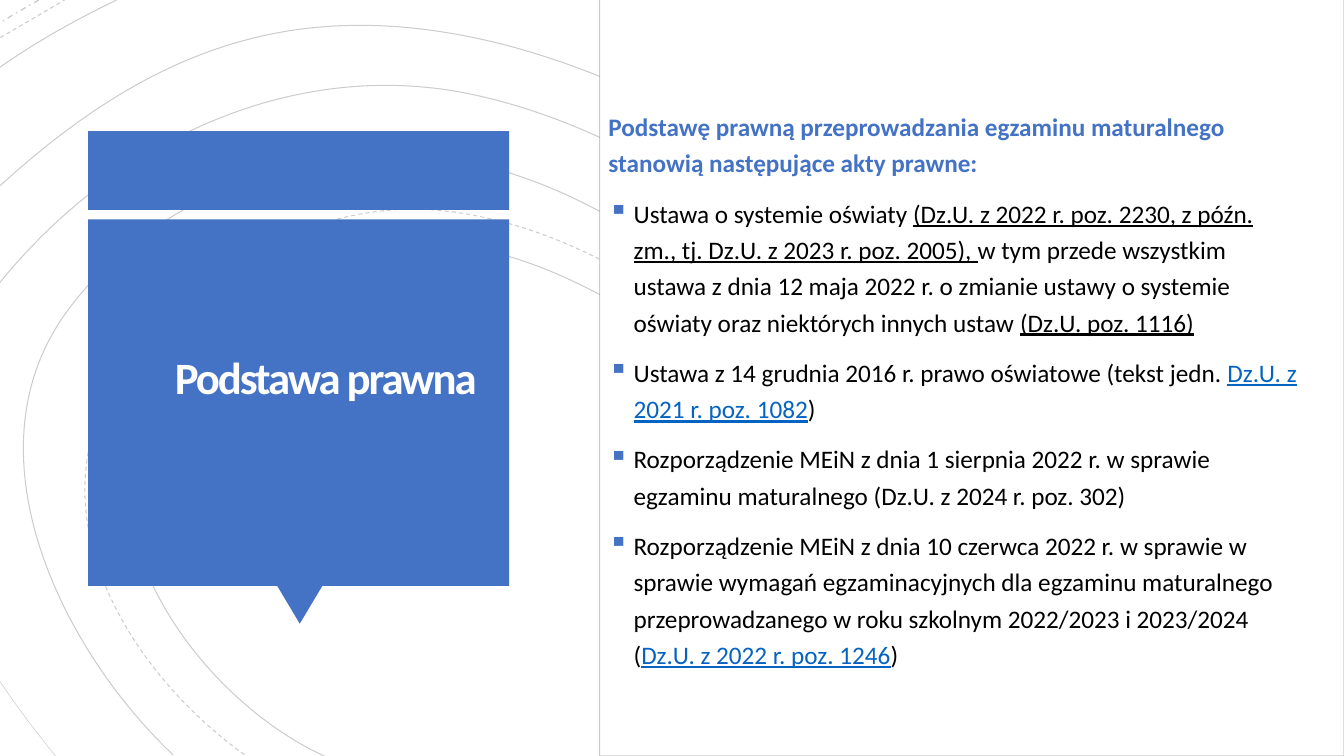
import pptx
import pptx.dml.color
import pptx.enum.dml
import pptx.enum.shapes
import pptx.enum.text
import pptx.oxml
import pptx.oxml.ns
import pptx.util

PX = 9525  # EMU in one px (96 px to the inch)
THEME = {
    "font": "Calibri",
    "accent": pptx.dml.color.RGBColor.from_string("4472C4"),
    "title": pptx.dml.color.RGBColor.from_string("FFFEFF"),
    "text": pptx.dml.color.RGBColor.from_string("000000"),
    "link": pptx.dml.color.RGBColor.from_string("0563C1"),
    "panel": pptx.dml.color.RGBColor.from_string("FFFFFF"),
    "title_size": pptx.util.Pt(32),
    "body_size": pptx.util.Pt(18),
}
qn = pptx.oxml.ns.qn
SOLID = pptx.enum.dml.MSO_LINE.SOLID
DASH = pptx.enum.dml.MSO_LINE.DASH
DASH_DOT = pptx.enum.dml.MSO_LINE.DASH_DOT
PRESET = pptx.enum.shapes.MSO_SHAPE


def draw_faint_line(shape, width, dash):
    shape.shadow.inherit = False
    shape.line.color.rgb = THEME["text"]
    shape.line.width = pptx.util.Pt(width)
    shape.line.dash_style = dash
    line_color = shape.element.spPr.find(qn("a:ln")).find(".//" + qn("a:srgbClr"))
    line_color.append(pptx.oxml.parse_xml(
        f'<a:alpha {pptx.oxml.ns.nsdecls("a")} val="20000"/>'))


def format_run(run, size, color, bold=False, underline=False):
    run.font.name = THEME["font"]
    run.font.size = THEME[size]
    run.font.color.rgb = THEME[color]
    run.font.bold = bold
    run.font.underline = underline


presentation = pptx.Presentation()
presentation.slide_width = 1280 * PX
presentation.slide_height = 720 * PX
slide = presentation.slides.add_slide(presentation.slide_layouts[6])

# Contour lines: width, dash, start point, then three points for each Bézier arc
contours = [
    (0.75, SOLID, [(841, 721), (984, 600), (802, 393), (708, 302), (623, 221),
                   (515, 157), (396, 147), (276, 135), (135, 200), (65, 295),
                   (-35, 429), (58, 618), (165, 719)]),
    (0.75, SOLID, [(583, 720), (682, 697), (845, 640), (792, 508), (742, 383),
                   (590, 267), (461, 238), (343, 211), (207, 270), (145, 375),
                   (70, 503), (192, 667), (309, 720)]),
    (0.75, DASH, [(677, 721), (734, 700), (802, 668), (832, 612), (870, 545),
                  (829, 475), (784, 422), (694, 316), (568, 218), (425, 201),
                  (306, 187), (185, 256), (117, 353), (26, 484), (122, 641),
                  (236, 721)]),
    (0.75, SOLID, [(936, 721), (1085, 580), (912, 396), (804, 294), (703, 198),
                   (579, 115), (440, 88), (273, 57), (107, 137), (0, 269)]),
    (0.38, SOLID, [(0, 649), (18, 676), (36, 699), (53, 720)]),
    (0.75, SOLID, [(1022, 721), (1164, 571), (1024, 405), (906, 295), (784, 181),
                   (640, 84), (478, 42), (286, -6), (146, 44), (0, 177)]),
    (0.75, SOLID, [(111, 0), (76, 17), (37, 38), (0, 64)]),
    (0.75, DASH, [(63, -1), (43, 11), (22, 23), (0, 36)]),
    (1, DASH_DOT, [(37, 0), (25, 7), (12, 14), (0, 22)]),
]
for width, dash, points in contours:
    builder = slide.shapes.build_freeform(*points[0], scale=PX)
    builder.add_line_segments(points[1:], close=False)
    contour = builder.convert_to_shape()
    contour.fill.background()
    draw_faint_line(contour, width, dash)
    # Turn each three straight segments into one Bézier arc
    outline = contour.element.spPr.find(".//" + qn("a:path"))
    segments = outline.findall(qn("a:lnTo"))
    for first in range(0, len(segments), 3):
        arc = outline.makeelement(qn("a:cubicBezTo"), {})
        outline.append(arc)
        for segment in segments[first:first + 3]:
            arc.append(segment[0])
            outline.remove(segment)

# Title block: top band, pointer and main block
for preset, left, top, width, height, rotation in [
    (PRESET.RECTANGLE, 84, 125, 401, 75, 0),
    (PRESET.ISOSCELES_TRIANGLE, 264, 558, 43, 36, 180),
    (PRESET.RECTANGLE, 84, 209, 401, 349, 0),
]:
    block = slide.shapes.add_shape(preset, left * PX, top * PX, width * PX, height * PX)
    block.rotation = rotation
    block.shadow.inherit = False
    block.fill.solid()
    block.fill.fore_color.rgb = THEME["accent"]
    block.line.fill.background()

# Title
title = slide.shapes.add_textbox(94 * PX, 218 * PX, 384 * PX, 166 * PX).text_frame
title.word_wrap = True
title.vertical_anchor = pptx.enum.text.MSO_ANCHOR.BOTTOM
title.margin_left = title.margin_right = title.margin_top = 24 * PX
title.margin_bottom = 0
title.text = "Podstawa prawna"
heading = title.paragraphs[0]
heading.alignment = pptx.enum.text.PP_ALIGN.RIGHT
heading.line_spacing = 0.8
format_run(heading.runs[0], "title_size", "title", bold=True)
heading.runs[0].font._element.set("spc", "-150")

# White panel behind the legal acts
panel = slide.shapes.add_shape(PRESET.RECTANGLE, 571 * PX, -1 * PX, 709 * PX, 721 * PX)
panel.fill.solid()
panel.fill.fore_color.rgb = THEME["panel"]
draw_faint_line(panel, 0.75, SOLID)

# Legal acts: each a list of (wording, color, underlined)
acts = [
    [("Ustawa o systemie oświaty ", "text", False),
     ("(Dz.U. z 2022 r. poz. 2230, z późn. zm., tj. Dz.U. z 2023 r. poz. 2005), ",
      "text", True),
     ("w tym przede wszystkim ustawa z dnia 12 maja 2022 r. o zmianie ustawy "
      "o systemie oświaty oraz niektórych innych ustaw ", "text", False),
     ("(Dz.U. poz. 1116)", "text", True)],
    [("Ustawa z 14 grudnia 2016 r. prawo oświatowe (tekst jedn. ", "text", False),
     ("Dz.U. z 2021 r. poz. 1082", "link", True),
     (")", "text", False)],
    [("Rozporządzenie MEiN z dnia 1 sierpnia 2022 r. w sprawie egzaminu "
      "maturalnego (Dz.U. z 2024 r. poz. 302)", "text", False)],
    [("Rozporządzenie MEiN z dnia 10 czerwca 2022 r. w sprawie w sprawie wymagań "
      "egzaminacyjnych dla egzaminu maturalnego przeprowadzanego w roku szkolnym "
      "2022/2023 i 2023/2024 (", "text", False),
     ("Dz.U. z 2022 r. poz. 1246", "link", True),
     (")", "text", False)],
]
body = slide.shapes.add_textbox(570 * PX, 123 * PX, 675 * PX, 492 * PX).text_frame
body.word_wrap = True
body.vertical_anchor = pptx.enum.text.MSO_ANCHOR.MIDDLE
body.text = ("Podstawę prawną przeprowadzania egzaminu maturalnego "
             "stanowią następujące akty prawne:")
intro = body.paragraphs[0]
intro.line_spacing = 1.2
format_run(intro.runs[0], "body_size", "accent", bold=True)

for act in acts:
    paragraph = body.add_paragraph()
    properties = paragraph._p.get_or_add_pPr()
    properties.set("marL", str(24 * PX))
    properties.set("indent", str(-24 * PX))
    for bullet in [
        f'<a:buClr {{}}><a:srgbClr val="{THEME["accent"]}"/></a:buClr>',
        '<a:buSzPct {} val="110000"/>',
        '<a:buChar {} char="▪"/>',
    ]:
        properties.append(pptx.oxml.parse_xml(bullet.format(pptx.oxml.ns.nsdecls("a"))))
    paragraph.line_spacing = 1.2
    paragraph.space_before = pptx.util.Pt(10)
    for wording, color, underlined in act:
        run = paragraph.add_run()
        run.text = wording
        format_run(run, "body_size", color, underline=underlined)

presentation.save("out.pptx")
